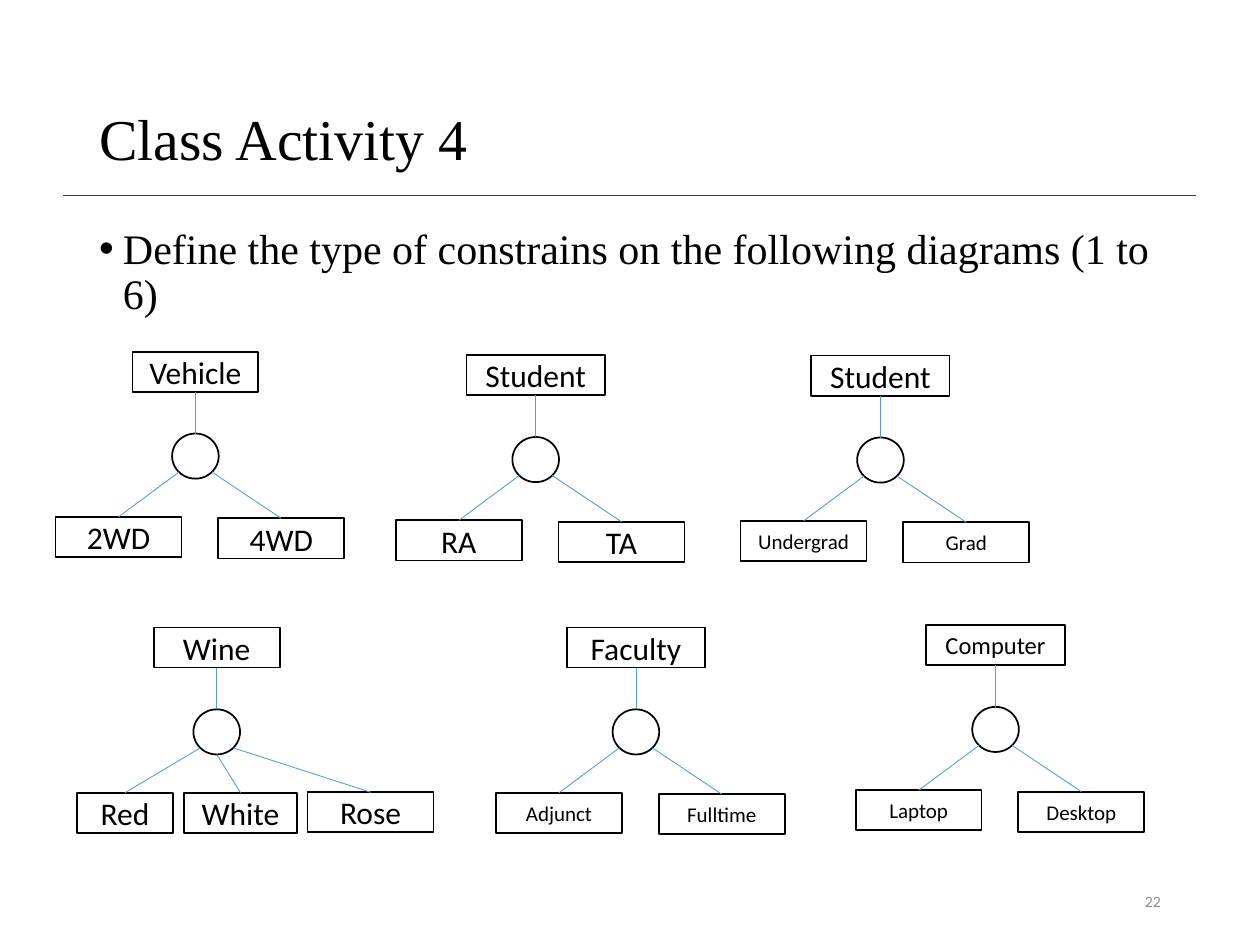
import pptx
import pptx.util
import pptx.dml.color
import pptx.enum.shapes
import pptx.enum.text
import pptx.oxml.ns
import lxml.etree

Cm, Pt = pptx.util.Cm, pptx.util.Pt
Kind = pptx.enum.shapes.MSO_SHAPE
Side = pptx.enum.text.PP_ALIGN
Anchor = pptx.enum.text.MSO_ANCHOR

SERIF, SANS = "Times New Roman", "Calibri"
TITLE = "Class Activity 4"
TASK = "Define the type of constrains on the following diagrams (1 to 6)"
PAGE = "22"

# Child places, as centre offset, width and extra drop
PAIR = [(-1.55, 2.54, 0), (1.73, 2.54, 0.03)]
TRIO = [(-1.85, 1.93, 0), (0.48, 2.29, 0), (3.1, 2.54, -0.01)]

# Centre, top, parent, its width and size, children, their size and places
TREES = [
    (3.94, 7.09, "Vehicle", 2.54, 18, ["2WD", "4WD"], 18, PAIR),
    (10.8, 7.16, "Student", 2.79, 18, ["RA", "TA"], 18, PAIR),
    (17.75, 7.17, "Student", 2.79, 18, ["Undergrad", "Grad"], 12, PAIR),
    (4.37, 12.65, "Wine", 2.54, 18, ["Red", "White", "Rose"], 18, TRIO),
    (12.82, 12.65, "Faculty", 2.79, 18, ["Adjunct", "Fulltime"], 12, PAIR),
    (20.07, 12.6, "Computer", 2.79, 14, ["Laptop", "Desktop"], 12, PAIR),
]
BOX_H, RING_W, RING_H = 0.81, 0.94, 0.91
RING_DROP, CHILD_DROP = 1.65, 3.33
DIAG = 0.5 ** 0.5  # where the 45 degree points of the ring lie

deck = pptx.Presentation()
deck.slide_width, deck.slide_height = Cm(25.4), Cm(19.05)
slide = deck.slides.add_slide(deck.slide_layouts[6])
shapes = slide.shapes


def tint(code):
    return pptx.dml.color.RGBColor.from_string(code)


def write(shape, text, size=18, font=SANS, color="000000", align=Side.LEFT,
          anchor=Anchor.MIDDLE, space=1.0, bullet=None, indent=0):
    frame = shape.text_frame
    frame.word_wrap = True
    frame.vertical_anchor = anchor
    para = frame.paragraphs[0]
    para.alignment, para.line_spacing = align, space
    run = para.add_run()
    run.text = text
    run.font.size, run.font.name = Pt(size), font
    run.font.color.rgb = tint(color)
    if bullet:
        props = para._p.get_or_add_pPr()
        props.set("marL", str(Cm(indent)))
        props.set("indent", str(-Cm(indent)))
        for tag, key, value in (("a:buFont", "typeface", "Arial"),
                                ("a:buChar", "char", bullet)):
            lxml.etree.SubElement(props, pptx.oxml.ns.qn(tag)).set(key, value)


def label(text, left, top, width, height, **style):
    write(shapes.add_textbox(Cm(left), Cm(top), Cm(width), Cm(height)), text, **style)


def outline(kind, mid, top, width, height):
    """Add a white, black-edged shape centred on mid."""
    shape = shapes.add_shape(kind, Cm(mid - width / 2), Cm(top), Cm(width), Cm(height))
    shape.shadow.inherit = False
    shape.fill.solid()
    shape.fill.fore_color.rgb = tint("FFFFFF")
    shape.line.color.rgb = tint("000000")
    shape.line.width = Pt(1)
    return shape


def box(text, mid, top, width, size):
    shape = outline(Kind.RECTANGLE, mid, top, width, BOX_H)
    write(shape, text, size=size, align=Side.CENTER)
    return shape


def link(x1, y1, x2, y2, color="5B9BD5", width=0.5):
    line = shapes.add_connector(pptx.enum.shapes.MSO_CONNECTOR.STRAIGHT,
                                Cm(x1), Cm(y1), Cm(x2), Cm(y2))
    line.line.color.rgb = tint(color)
    line.line.width = Pt(width)
    lxml.etree.SubElement(line._element.spPr, pptx.oxml.ns.qn("a:effectLst"))
    return line


def tree(mid, top, name, width, size, names, small, places):
    root = box(name, mid, top, width, size)
    ring_top = top + RING_DROP
    ring = outline(Kind.OVAL, mid, ring_top, RING_W, RING_H)
    stem = link(mid, top + BOX_H, mid, ring_top)
    stem.begin_connect(root, 2)
    stem.end_connect(ring, 0)
    for i, (text, (shift, wide, extra)) in enumerate(zip(names, places)):
        child_top = top + CHILD_DROP + extra
        child = box(text, mid + shift, child_top, wide, small)
        # -1 for the first child, 1 for the last, 0 for one in the middle
        turn = 2 * i / (len(names) - 1) - 1
        reach = DIAG if turn else 1
        branch = link(mid + turn * DIAG * RING_W / 2,
                      ring_top + (1 + reach) * RING_H / 2,
                      mid + shift, child_top)
        branch.end_connect(child, 0)


link(1.27, 3.94, 24.1, 3.94, color="404040", width=1)
label(TITLE, 1.75, 1.02, 21.9, 3.68, size=33, font=SERIF, space=0.9)
label(TASK, 1.75, 4.47, 21.9, 12.7, size=24, font=SERIF, space=0.9,
      anchor=Anchor.TOP, bullet="•", indent=0.48)
label(PAGE, 17.93, 17.65, 5.72, 1.02, size=9, color="8C8C8C", align=Side.RIGHT)
for item in TREES:
    tree(*item)

deck.save("out.pptx")
